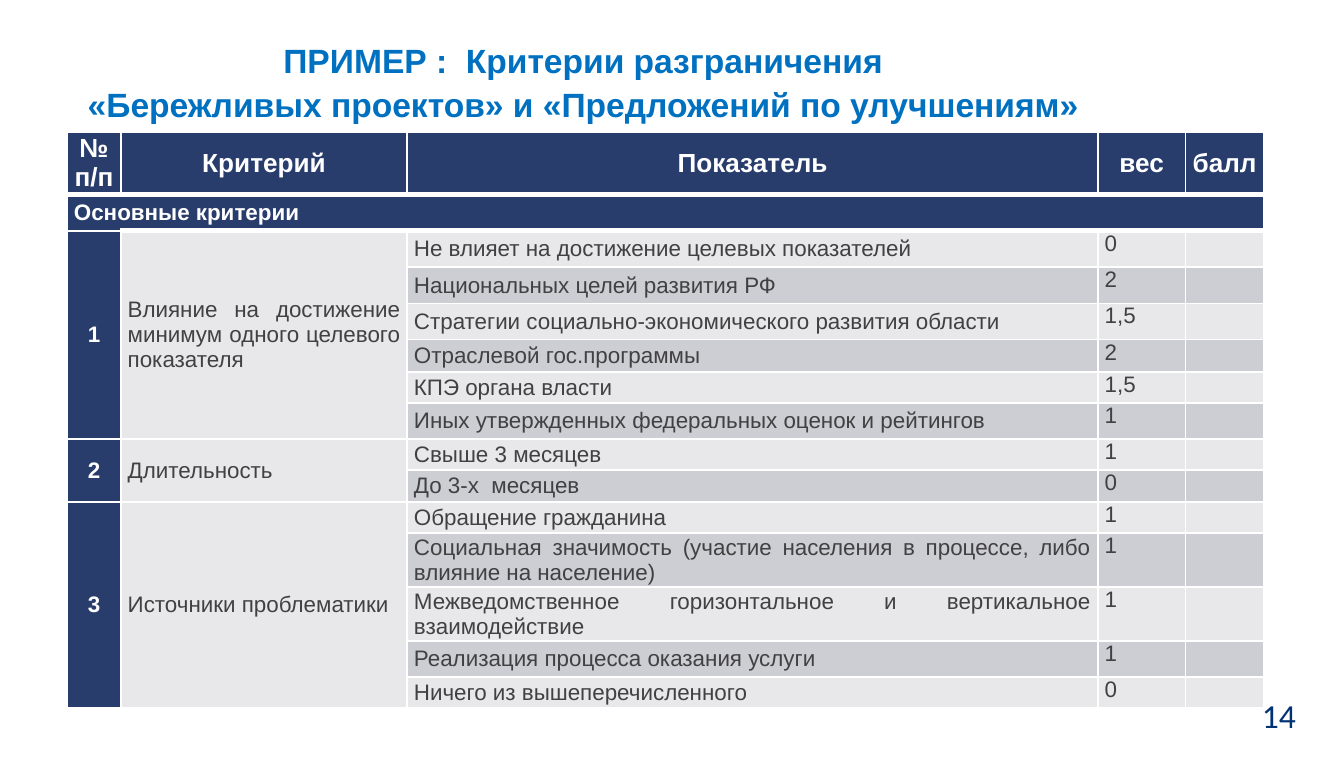
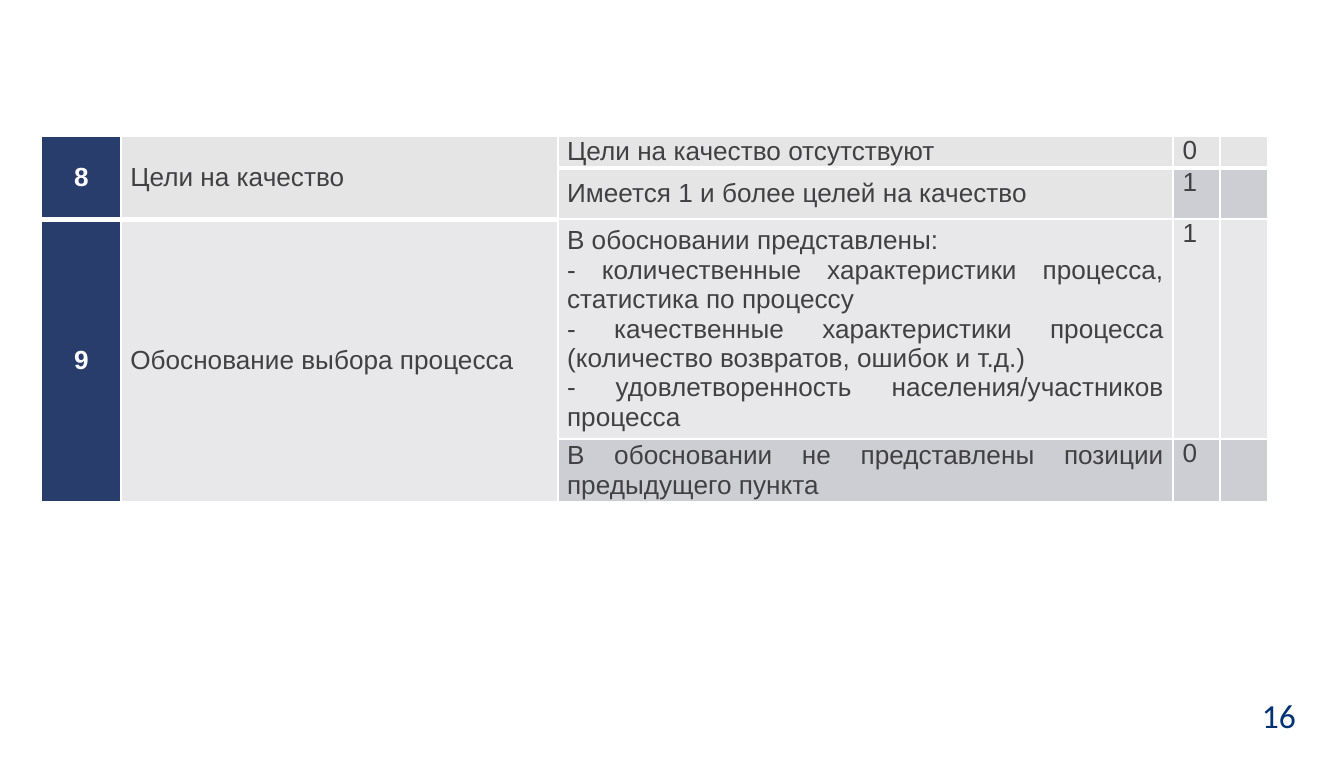
from lxml import etree
from pptx import Presentation
from pptx.dml.color import RGBColor
from pptx.enum.text import MSO_ANCHOR, PP_ALIGN
from pptx.oxml.ns import qn
from pptx.util import Inches, Pt

LEFT, CENTER, JUST = PP_ALIGN.LEFT, PP_ALIGN.CENTER, PP_ALIGN.JUSTIFY
TOP, MIDDLE = MSO_ANCHOR.TOP, MSO_ANCHOR.MIDDLE

# Shared look
NAVY, WHITE, GREY = "293D6D", "FFFFFF", "414042"
LIGHT, DARK, PALE = "E8E8EB", "CDCED4", "E5E5E5"
BLUE, PAGE = "0070C0", "003274"

# Content
TITLE = [
    "ПРИМЕР :  Критерии разграничения ",
    "«Бережливых проектов» и «Предложений по улучшениям» ",
]
HEADS = ["№ п/п", "Критерий", "Показатель", "вес", " балл"]
SECTION = "Основные критерии"

# Each group: number, criterion, (indicator, weight) pairs
MAIN = [
    ("1", "Влияние на достижение минимум одного целевого показателя", [
        ("Не влияет на достижение целевых показателей", "0"),
        ("Национальных целей развития РФ", "2"),
        ("Стратегии социально-экономического развития области", "1,5"),
        ("Отраслевой гос.программы", "2"),
        ("КПЭ органа власти", "1,5"),
        ("Иных утвержденных федеральных оценок и рейтингов", "1"),
    ]),
    ("2", "Длительность", [
        ("Свыше 3 месяцев", "1"),
        ("До 3-х  месяцев", "0"),
    ]),
    ("3", "Источники проблематики", [
        ("Обращение гражданина", "1"),
        ("Социальная значимость (участие населения в процессе, "
         "либо влияние на население)", "1"),
        ("Межведомственное горизонтальное и вертикальное взаимодействие", "1"),
        ("Реализация процесса оказания услуги", "1"),
        ("Ничего из вышеперечисленного", "0"),
    ]),
]
MORE = [
    ("8", "Цели на качество", [
        ("Цели на качество отсутствуют", "0"),
        ("Имеется 1 и более целей на качество", "1"),
    ]),
    ("9", "Обоснование выбора процесса", [
        ("В обосновании представлены:\n"
         "- количественные характеристики процесса, статистика по процессу\n"
         "- качественные характеристики процесса "
         "(количество возвратов, ошибок и т.д.)\n"
         "- удовлетворенность населения/участников процесса", "1"),
        ("В обосновании не представлены позиции предыдущего пункта", "0"),
    ]),
]

MAIN_COLS = [0.4, 2.13, 5.14, 0.65, 0.58]
MAIN_ROWS = [0.46, 0.27, 0.27, 0.27, 0.27, 0.24, 0.23, 0.27,
             0.23, 0.24, 0.23, 0.4, 0.4, 0.27, 0.23]
MORE_COLS = [0.59, 3.25, 4.58, 0.35, 0.35]
MORE_ROWS = [0.24, 0.38, 1.53, 0.44]


def rgb(code):
    return RGBColor.from_string(code)


def write(frame, text, size, color, bold=False, align=LEFT, font="Arial"):
    frame.text = text
    for par in frame.paragraphs:
        par.alignment = align
        for run in par.runs:
            run.font.name = font
            run.font.size = Pt(size)
            run.font.bold = bold
            run.font.color.rgb = rgb(color)
        if not par.runs:
            etree.SubElement(par._p, qn("a:endParaRPr"), sz=str(size * 100))


def add_text(slide, box, text, size, color, **style):
    frame = slide.shapes.add_textbox(*map(Inches, box)).text_frame
    frame.word_wrap = True
    write(frame, text, size, color, **style)
    return frame


def add_page(slide, num):
    add_text(slide, (9.29, 5.12, 0.69, 0.41), num, 18, PAGE, font="Calibri")


def add_grid(slide, left, top, cols, rows):
    box = map(Inches, (left, top, sum(cols), sum(rows)))
    table = slide.shapes.add_table(len(rows), len(cols), *box).table
    table.first_row = table.horz_banding = False
    for col, width in zip(table.columns, cols):
        col.width = Inches(width)
    for row, height in zip(table.rows, rows):
        row.height = Inches(height)
    return table


def fill_cell(cell, text, size, fill, color=GREY, bold=False, align=JUST,
              anchor=MIDDLE, pad=0.05):
    cell.margin_left = cell.margin_right = Inches(pad)
    cell.margin_top = cell.margin_bottom = 0
    cell.vertical_anchor = anchor
    cell.fill.solid()
    cell.fill.fore_color.rgb = rgb(fill)
    write(cell.text_frame, text, size, color, bold, align)


def fill_groups(table, groups, row, size, pad):
    for num, name, items in groups:
        last = row + len(items) - 1
        for col in (0, 1):
            table.cell(row, col).merge(table.cell(last, col))
        # The first group of a table without a header is paler
        base = PALE if row == 0 else LIGHT
        fill_cell(table.cell(row, 0), num, size, NAVY, WHITE, True, CENTER,
                  pad=pad)
        fill_cell(table.cell(row, 1), name, size, base, pad=pad)
        for i, (label, weight) in enumerate(items):
            band = DARK if i % 2 else base
            shade = base if base == PALE else band
            fill_cell(table.cell(row, 2), label, size, shade, pad=pad)
            fill_cell(table.cell(row, 3), weight, size, band, anchor=TOP,
                      pad=pad)
            fill_cell(table.cell(row, 4), "", size, band)
            row += 1


def add_lines(table):
    """White rules, thick beneath every cell that starts in the top row."""
    for col in range(len(table.columns)):
        above = False
        for row in range(len(table.rows)):
            cell = table.cell(row, col)
            first = row == 0 or (above and cell.is_spanned)
            widths = {"L": 1, "R": 1, "T": 3 if above else 1,
                      "B": 3 if first else 1}
            props = cell._tc.get_or_add_tcPr()
            for i, (side, width) in enumerate(widths.items()):
                line = etree.Element(qn("a:ln" + side), w=str(Pt(width)))
                solid = etree.SubElement(line, qn("a:solidFill"))
                etree.SubElement(solid, qn("a:srgbClr"), val=WHITE)
                props.insert(i, line)
            above = first


def main():
    prs = Presentation()
    prs.slide_width, prs.slide_height = Inches(10), Inches(5.63)
    blank = prs.slide_layouts[6]

    # Slide with the main criteria
    slide = prs.slides.add_slide(blank)
    add_page(slide, "14")
    frame = add_text(slide, (0.33, 0.23, 8.09, 0.75), "\n".join(TITLE), 18,
                     BLUE, bold=True, align=CENTER)
    for par in frame.paragraphs:
        par.line_spacing = 1.07
    table = add_grid(slide, 0.5, 0.98, MAIN_COLS, MAIN_ROWS)
    for col, head in enumerate(HEADS):
        final = col == len(HEADS) - 1
        fill_cell(table.cell(0, col), head, 14, NAVY, WHITE, True,
                  LEFT if final else CENTER, pad=0 if final else 0.05)
    table.cell(1, 0).merge(table.cell(1, 4))
    fill_cell(table.cell(1, 0), SECTION, 12, NAVY, WHITE, True, LEFT)
    fill_groups(table, MAIN, 2, 12, 0.05)
    add_lines(table)

    # Slide with the remaining criteria
    slide = prs.slides.add_slide(blank)
    add_page(slide, "16")
    table = add_grid(slide, 0.31, 1.01, MORE_COLS, MORE_ROWS)
    fill_groups(table, MORE, 0, 14, 0.07)
    add_lines(table)

    prs.save("out.pptx")


if __name__ == "__main__":
    main()
